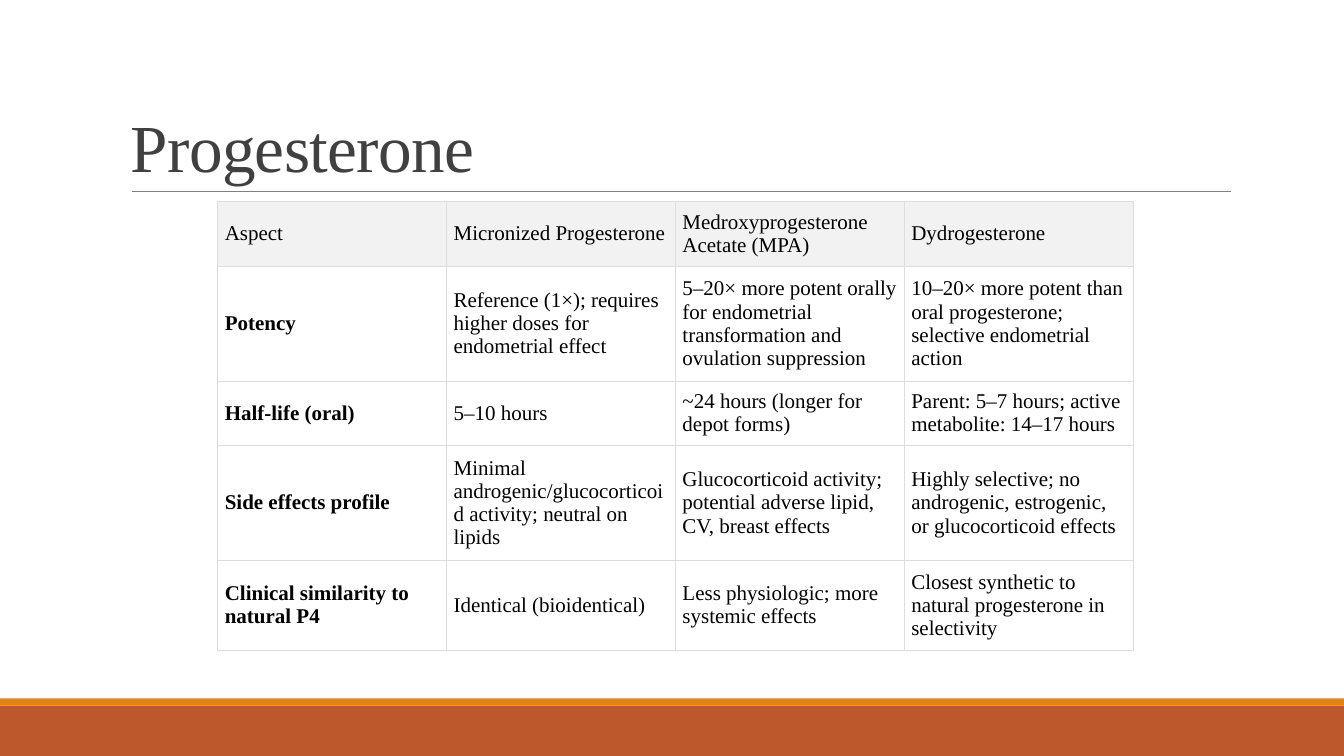
from lxml import etree
from pptx import Presentation, util as u
from pptx.dml.color import RGBColor
from pptx.enum import shapes, text
from pptx.oxml import ns

WIDTH, HEIGHT = u.Inches(13.33), u.Inches(7.5)
COL, ROW = u.Inches(2.27), u.Inches(0.01)
FONT = "Times New Roman"
ROW_UNITS = [63, 113, 63, 113, 88]
ASPECTS = [
    ["Aspect", "Micronized Progesterone", "Medroxyprogesterone Acetate (MPA)",
     "Dydrogesterone"],
    ["Potency",
     "Reference (1×); requires higher doses for endometrial effect",
     "5–20× more potent orally for endometrial transformation and ovulation suppression",
     "10–20× more potent than oral progesterone; selective endometrial action"],
    ["Half-life (oral)", "5–10 hours", "~24 hours (longer for depot forms)",
     "Parent: 5–7 hours; active metabolite: 14–17 hours"],
    ["Side effects profile",
     "Minimal androgenic/glucocorticoid activity; neutral on lipids",
     "Glucocorticoid activity; potential adverse lipid, CV, breast effects",
     "Highly selective; no androgenic, estrogenic, or glucocorticoid effects"],
    ["Clinical similarity to natural P4", "Identical (bioidentical)",
     "Less physiologic; more systemic effects",
     "Closest synthetic to natural progesterone in selectivity"],
]


def rgb(value):
    return RGBColor.from_string(value)


def across(inches):
    return round(WIDTH * inches / 13.33)


def down(inches):
    return round(HEIGHT * inches / 7.5)


def add_run(p, words, size, color, bold=False):
    r = p.add_run()
    r.text = words
    r.font.name, r.font.size, r.font.bold = FONT, u.Pt(size), bold
    r.font.color.rgb = rgb(color)
    return r


def add_band(s, top, height, color):
    sp = s.shapes.add_shape(shapes.MSO_SHAPE.RECTANGLE, 0, down(top), WIDTH, down(height))
    sp.shadow.inherit = False
    sp.fill.solid()
    sp.fill.fore_color.rgb = rgb(color)
    sp.line.fill.background()


def add_rule(s, left, right, y, color):
    line = s.shapes.add_connector(shapes.MSO_CONNECTOR.STRAIGHT,
                                  across(left), down(y), across(right), down(y))
    line.line.color.rgb = rgb(color)
    line.line.width = u.Pt(0.5)
    etree.SubElement(line._element.spPr, ns.qn("a:effectLst"))


def add_title(s, words):
    tf = s.shapes.add_textbox(across(1.2), down(0.31), across(11), down(1.59)).text_frame
    tf.word_wrap = True
    tf.vertical_anchor = text.MSO_ANCHOR.BOTTOM
    p = tf.paragraphs[0]
    p.line_spacing = 0.85
    r = add_run(p, words, 48, "404040")
    r._r.get_or_add_rPr().set("spc", "-50")


def set_borders(cell, color, width):
    tcPr = cell._tc.get_or_add_tcPr()
    for i, side in enumerate(("lnL", "lnR", "lnT", "lnB")):
        ln = etree.Element(ns.qn(f"a:{side}"), w=str(u.Pt(width)))
        fill = etree.SubElement(ln, ns.qn("a:solidFill"))
        etree.SubElement(fill, ns.qn("a:srgbClr"), val=color)
        tcPr.insert(i, ln)


def fill_cell(cell, words, header, bold):
    cell.vertical_anchor = text.MSO_ANCHOR.MIDDLE
    cell.margin_left = cell.margin_right = u.Inches(0.07)
    cell.margin_top = cell.margin_bottom = u.Inches(0.07)
    if header:
        cell.fill.solid()
        cell.fill.fore_color.rgb = rgb("F2F2F2")
    else:
        cell.fill.background()
    set_borders(cell, "DDDDDD", 0.75)
    add_run(cell.text_frame.paragraphs[0], words, 15, "000000", bold)


def add_comparison(s, rows):
    columns = len(rows[0])
    table = s.shapes.add_table(len(rows), columns, across(2.16), down(2),
                               COL * columns, ROW * sum(ROW_UNITS)).table
    table.first_row = table.horz_banding = False
    for column in table.columns:
        column.width = COL
    for i, (units, row) in enumerate(zip(ROW_UNITS, rows)):
        table.rows[i].height = ROW * units
        for j, words in enumerate(row):
            fill_cell(table.cell(i, j), words, i == 0, i > 0 and j == 0)


def main():
    prs = Presentation()
    prs.slide_width, prs.slide_height = WIDTH, HEIGHT
    s = prs.slides.add_slide(prs.slide_layouts[6])
    add_band(s, 7, 0.5, "BD582C")
    add_band(s, 6.93, 0.07, "E48312")
    add_rule(s, 1.31, 12.21, 1.9, "808080")
    add_title(s, "Progesterone")
    add_comparison(s, ASPECTS)
    prs.save("out.pptx")


if __name__ == "__main__":
    main()
